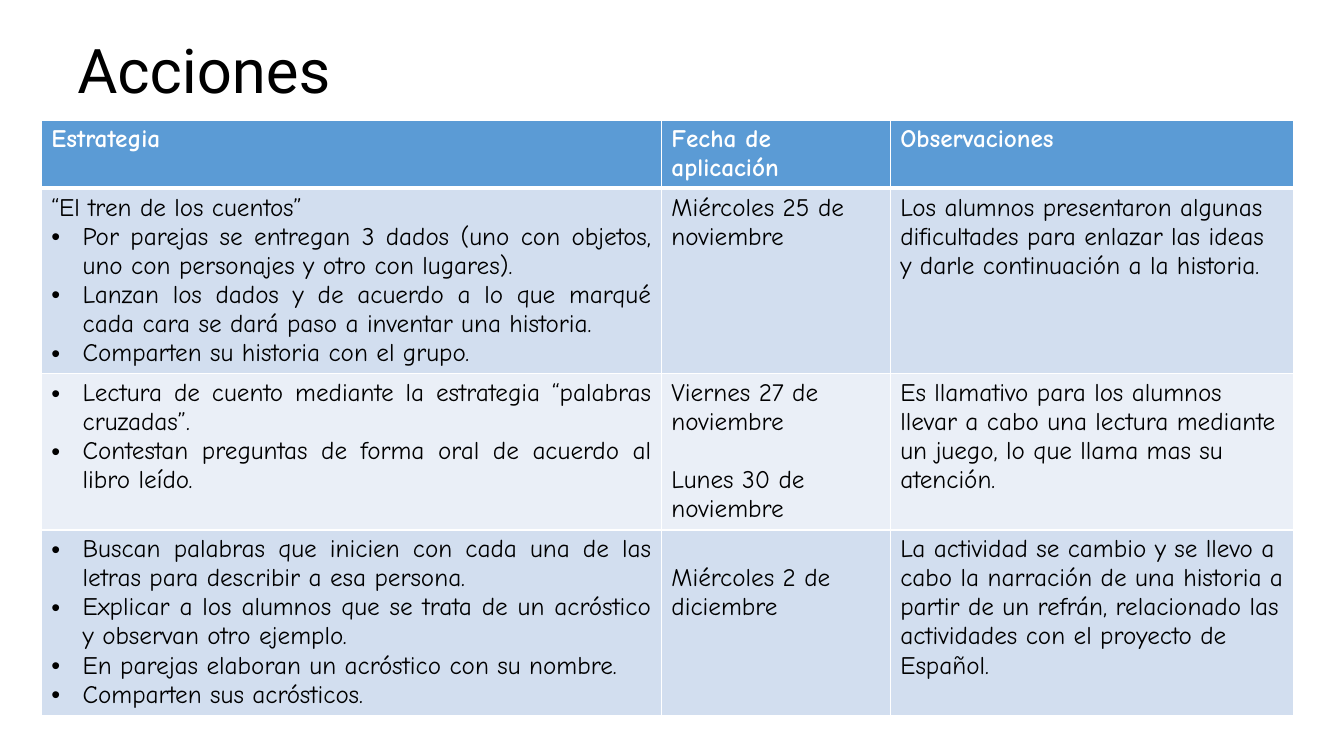
import dataclasses

import lxml.etree
import pptx
import pptx.dml.color
import pptx.enum.text
import pptx.oxml.ns
import pptx.util

Inches, Pt = pptx.util.Inches, pptx.util.Pt
Align = pptx.enum.text.PP_ALIGN
qn = pptx.oxml.ns.qn


@dataclasses.dataclass(frozen=True)
class Theme:
    title_font: str = "Roboto"
    table_font: str = "Comic Neue"
    title_size: int = 44
    table_size: int = 18
    header: str = "5B9BD5"
    bands: tuple = ("D2DEEF", "EAEFF7")
    ink: str = "000000"
    white: str = "FFFFFF"
    rule: float = 1
    header_rule: float = 3
    line: float = 0.29      # height of one line of table text, inches
    indent: float = 0.31


THEME = Theme()
SLIDE = (13.33, 7.5)
TABLE_AT = (0.41, 1.19)
COLUMNS = (6.15, 2.27, 4)
ROWS = (0.67, 1.84, 1.55, 1.84)

HEADINGS = ("Estrategia", "Fecha de aplicación", "Observaciones")
# Each action: introduction, steps, dates, lines left free above dates, remarks
ACTIONS = (
    (["“El tren de los cuentos”"],
     ["Por parejas se entregan 3 dados (uno con objetos, uno con personajes y otro con lugares).",
      "Lanzan los dados y de acuerdo a lo que marqué cada cara se dará paso a inventar una historia.",
      "Comparten su historia con el grupo."],
     ["Miércoles 25 de noviembre"], 0,
     "Los alumnos presentaron algunas dificultades para enlazar las ideas y darle "
     "continuación a la historia."),
    ([],
     ["Lectura de cuento mediante la estrategia “palabras cruzadas”.",
      "Contestan preguntas de forma oral de acuerdo al libro leído."],
     ["Viernes 27 de noviembre", "Lunes 30 de noviembre"], 0,
     "Es llamativo para los alumnos llevar a cabo una lectura mediante un juego, "
     "lo que llama mas su atención."),
    ([],
     ["Buscan palabras que inicien con cada una de las letras para describir a esa persona.",
      "Explicar a los alumnos que se trata de un acróstico y observan otro ejemplo.",
      "En parejas elaboran un acróstico con su nombre.",
      "Comparten sus acrósticos."],
     ["Miércoles 2 de diciembre"], 1,
     "La actividad se cambio y se llevo a cabo la narración de una historia a partir de un "
     "refrán, relacionado las actividades con el proyecto de Español."),
)


def set_font(paragraph, name, size, color, bold=False):
    font = paragraph.font
    font.name, font.size, font.bold = name, Pt(size), bold
    font.color.rgb = pptx.dml.color.RGBColor.from_string(color)


def add_bullet(paragraph):
    properties = paragraph._p.get_or_add_pPr()
    properties.set("marL", str(Inches(THEME.indent)))
    properties.set("indent", str(-Inches(THEME.indent)))
    lxml.etree.SubElement(properties, qn("a:buFont")).set("typeface", "Arial")
    lxml.etree.SubElement(properties, qn("a:buChar")).set("char", "•")


def set_borders(cell, top, bottom):
    properties = cell._tc.get_or_add_tcPr()
    widths = {"a:lnL": THEME.rule, "a:lnR": THEME.rule, "a:lnT": top, "a:lnB": bottom}
    for side, width in widths.items():
        border = lxml.etree.SubElement(properties, qn(side), w=str(Pt(width)))
        fill = lxml.etree.SubElement(border, qn("a:solidFill"))
        lxml.etree.SubElement(fill, qn("a:srgbClr"), val=THEME.white)


def style_cell(cell, color, top=THEME.rule, bottom=THEME.rule):
    set_borders(cell, top, bottom)
    cell.fill.solid()
    cell.fill.fore_color.rgb = pptx.dml.color.RGBColor.from_string(color)


def write_cell(cell, lines, color=THEME.ink, bold=False, align=Align.LEFT,
               bullets_from=None, gap=0):
    frame = cell.text_frame
    for index, line in enumerate(lines):
        paragraph = frame.add_paragraph() if index else frame.paragraphs[0]
        paragraph.text = line
        paragraph.alignment = align
        if index and gap:
            paragraph.space_before = Pt(gap)
        if bullets_from is not None and index >= bullets_from:
            add_bullet(paragraph)
        set_font(paragraph, THEME.table_font, THEME.table_size, color, bold)


def add_title(slide, text):
    title = slide.shapes.title
    title.left, title.top = Inches(SLIDE[0] * 0.05), 0
    title.width, title.height = Inches(11.5), Inches(1.45)
    title.text_frame.text = text
    title.text_frame.vertical_anchor = pptx.enum.text.MSO_ANCHOR.MIDDLE
    paragraph = title.text_frame.paragraphs[0]
    paragraph.alignment = Align.LEFT
    paragraph.line_spacing = 0.9
    set_font(paragraph, THEME.title_font, THEME.title_size, THEME.ink)


def add_actions_table(slide):
    left, top, width, height = map(Inches, (*TABLE_AT, sum(COLUMNS), sum(ROWS)))
    actions = slide.shapes.add_table(len(ROWS), len(COLUMNS), left, top, width, height).table
    for column, column_width in zip(actions.columns, COLUMNS):
        column.width = Inches(column_width)
    for row, row_height in zip(actions.rows, ROWS):
        row.height = Inches(row_height)

    # Header row
    for cell, heading in zip(actions.rows[0].cells, HEADINGS):
        style_cell(cell, THEME.header, bottom=THEME.header_rule)
        write_cell(cell, [heading], THEME.white, bold=True)

    # One banded row per action
    for number, (intro, steps, dates, free_lines, remarks) in enumerate(ACTIONS):
        strategy, date, observations = actions.rows[number + 1].cells
        for cell in (strategy, date, observations):
            style_cell(cell, THEME.bands[number % 2],
                       top=THEME.rule if number else THEME.header_rule)
        write_cell(strategy, intro + steps, align=Align.JUSTIFY, bullets_from=len(intro))
        date.margin_top = Inches(0.05 + free_lines * THEME.line)
        write_cell(date, dates, gap=THEME.line * 72)
        write_cell(observations, [remarks])


def main():
    presentation = pptx.Presentation()
    presentation.slide_width, presentation.slide_height = map(Inches, SLIDE)
    slide = presentation.slides.add_slide(presentation.slide_layouts.get_by_name("Title Only"))
    add_title(slide, "Acciones")
    add_actions_table(slide)
    presentation.save("out.pptx")


if __name__ == "__main__":
    main()
